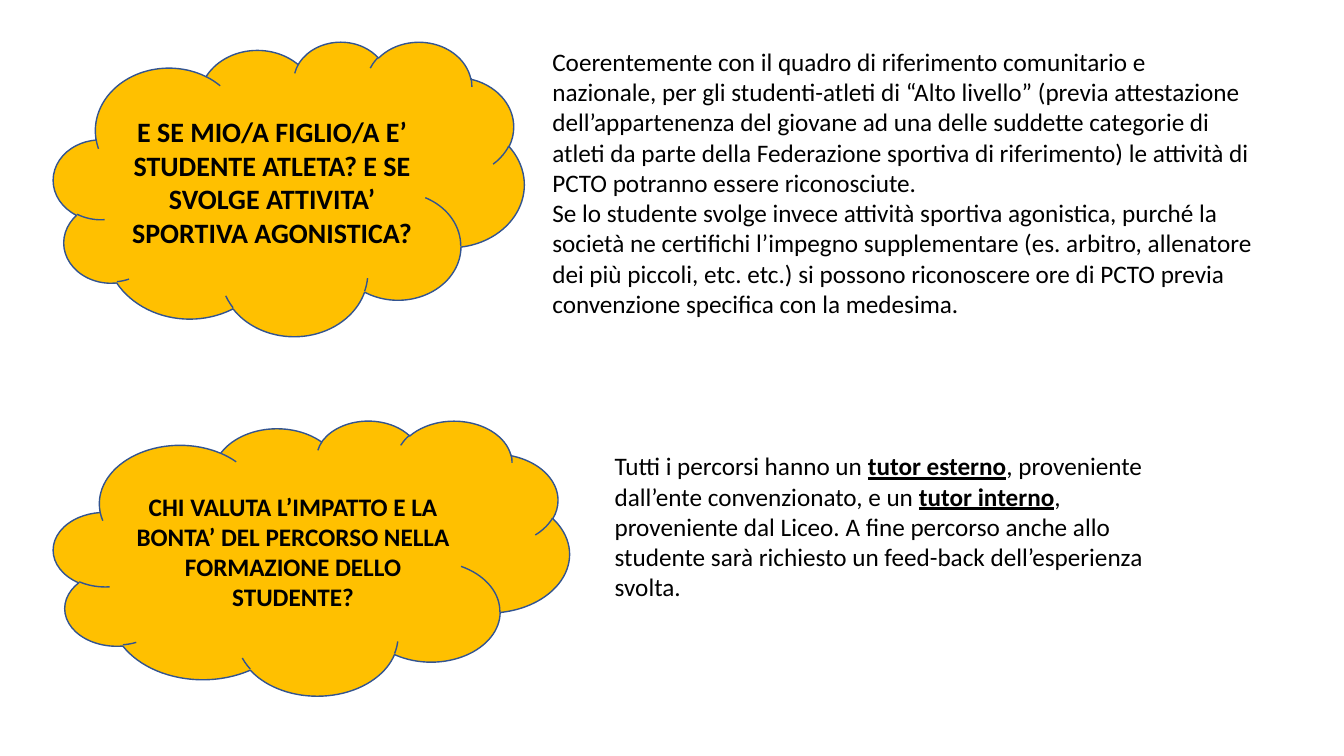
from pptx import Presentation
from pptx import util as u
from pptx.dml.color import RGBColor
from pptx.enum import shapes, text

GOLD = RGBColor(0xFF, 0xC0, 0x00)
BLUE = RGBColor(0x32, 0x54, 0x91)
BLACK = RGBColor(0x00, 0x00, 0x00)
FONT = "Calibri"
LEFT_MARGIN = 1.35
TOP_MARGIN = 1.04

ATHLETE_QUESTION = [
    "E SE MIO/A FIGLIO/A E’",
    "STUDENTE ATLETA? E SE SVOLGE ATTIVITA’ SPORTIVA AGONISTICA?",
]
ATHLETE_ANSWER = [
    "Coerentemente con il quadro di riferimento comunitario e nazionale, per gli "
    "studenti-atleti di “Alto livello” (previa attestazione dell’appartenenza del "
    "giovane ad una delle suddette categorie di atleti da parte della Federazione "
    "sportiva di riferimento) le attività di PCTO potranno essere riconosciute.",
    "Se lo studente svolge invece attività sportiva agonistica, purché la società ne "
    "certifichi l’impegno supplementare (es. arbitro, allenatore dei più piccoli, etc. "
    "etc.) si possono riconoscere ore di PCTO previa convenzione specifica con la "
    "medesima.",
]
EVALUATION_QUESTION = [
    "CHI VALUTA L’IMPATTO E LA BONTA’ DEL PERCORSO NELLA FORMAZIONE DELLO STUDENTE?",
]
EVALUATION_ANSWER = [
    "Tutti i percorsi hanno un *tutor esterno*, proveniente dall’ente convenzionato, "
    "e un *tutor interno*, proveniente dal Liceo. A fine percorso anche allo studente "
    "sarà richiesto un feed-back dell’esperienza svolta.",
]


def write_paragraphs(frame, lines, size, bold=None, alignment=None):
    """Write the lines, with words between asterisks bold and underlined."""
    frame.word_wrap = True
    for index, line in enumerate(lines):
        paragraph = frame.add_paragraph() if index else frame.paragraphs[0]
        paragraph.alignment = alignment
        font = paragraph.font
        font.name, font.size, font.bold = FONT, u.Pt(size), bold
        font.color.rgb = BLACK
        for position, part in enumerate(line.split("*")):
            run = paragraph.add_run()
            run.text = part
            if position % 2:
                run.font.bold = run.font.underline = True


def add_question(slide, box, lines, size):
    """Add a golden cloud holding a centred question."""
    cloud = slide.shapes.add_shape(shapes.MSO_SHAPE.CLOUD, *map(u.Cm, box))
    cloud.shadow.inherit = False
    cloud.fill.solid()
    cloud.fill.fore_color.rgb = GOLD
    cloud.line.color.rgb = BLUE
    cloud.line.width = u.Pt(1)
    cloud.text_frame.vertical_anchor = text.MSO_ANCHOR.MIDDLE
    write_paragraphs(cloud.text_frame, lines, size, True, text.PP_ALIGN.CENTER)


def add_answer(slide, box, lines):
    """Add a text box holding an answer."""
    frame = slide.shapes.add_textbox(*map(u.Cm, box)).text_frame
    frame.auto_size = text.MSO_AUTO_SIZE.SHAPE_TO_FIT_TEXT
    write_paragraphs(frame, lines, 18)


def main():
    """Build the slide and save it."""
    presentation = Presentation()
    presentation.slide_width = u.Cm(33.87)
    presentation.slide_height = u.Cm(19.05)
    slide = presentation.slides.add_slide(presentation.slide_layouts[6])
    add_question(slide, (LEFT_MARGIN, TOP_MARGIN, 11.86, 7.42), ATHLETE_QUESTION, 20)
    add_question(slide, (LEFT_MARGIN, 10.59, 13, 6.93), EVALUATION_QUESTION, 18)
    add_answer(slide, (13.67, TOP_MARGIN, 18.16, 7.19), ATHLETE_ANSWER)
    add_answer(slide, (15.24, 11.23, 13.84, 4.11), EVALUATION_ANSWER)
    presentation.save("out.pptx")


if __name__ == "__main__":
    main()
